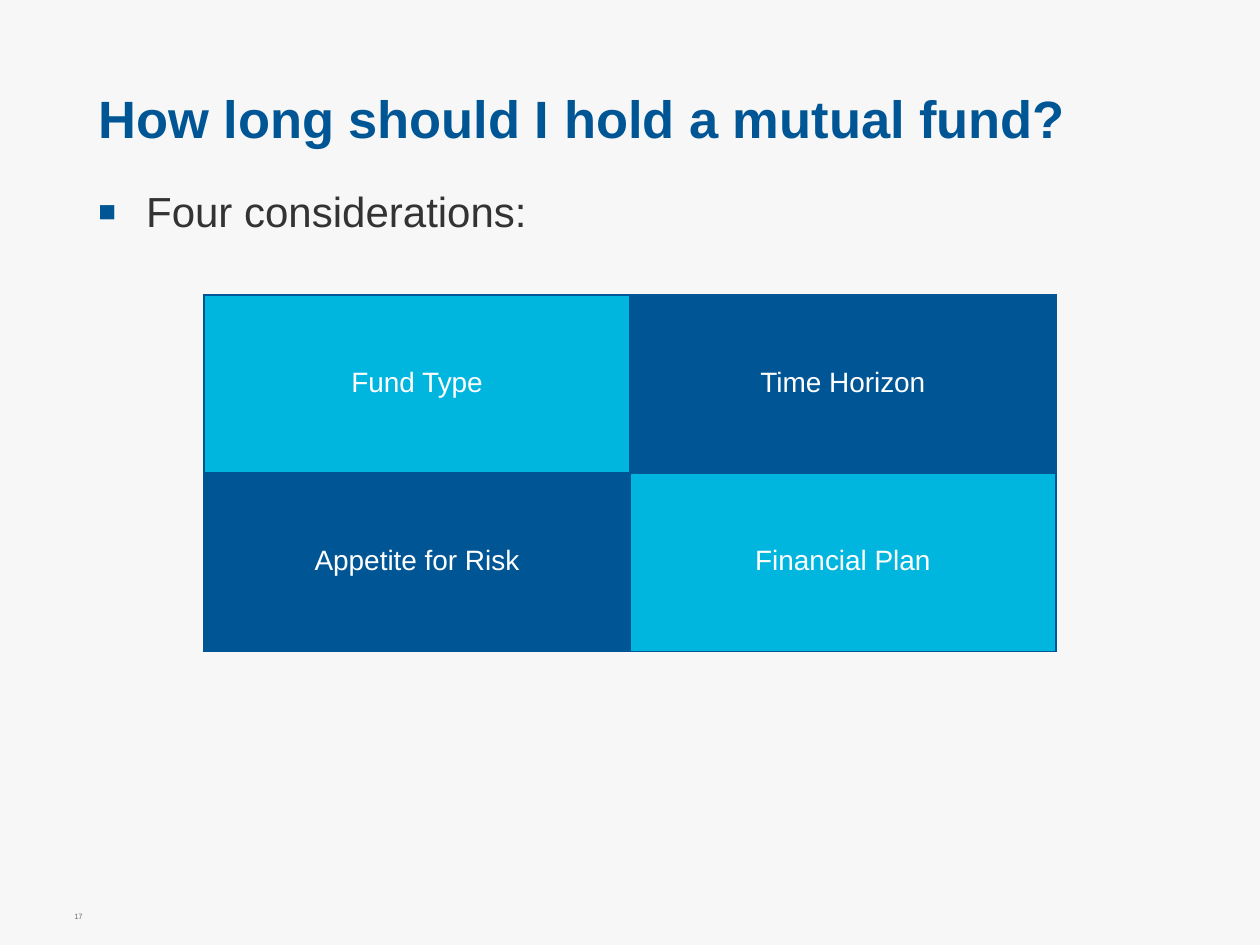
from dataclasses import dataclass

from lxml import etree
from pptx import Presentation
from pptx.dml.color import RGBColor
from pptx.enum.text import MSO_ANCHOR, PP_ALIGN
from pptx.oxml.ns import qn
from pptx.util import Inches, Pt

MIDDLE = MSO_ANCHOR.MIDDLE
TOP = MSO_ANCHOR.TOP
CENTER = PP_ALIGN.CENTER


@dataclass(frozen=True)
class Theme:
    """Colours, font and type sizes of the slide."""
    face: str = "Arial"
    back: str = "F7F7F7"
    navy: str = "005695"
    cyan: str = "00B6DE"
    ink: str = "333333"
    grey: str = "6C6F70"
    white: str = "FFFFFF"
    title: float = 30
    body: float = 24
    cell: float = 16
    number: float = 7.5


THEME = Theme()
FACTORS = [["Fund Type", "Time Horizon"], ["Appetite for Risk", "Financial Plan"]]


def style(para, size, color, bold=False):
    """Format every run of a paragraph."""
    for run in para.runs:
        font = run.font
        font.name, font.size, font.bold = THEME.face, Pt(size), bold
        font.color.rgb = RGBColor.from_string(color)


def add_text(slide, text, box, size, color, bold=False, anchor=TOP):
    """Add a text box without margins and return its paragraph."""
    frame = slide.shapes.add_textbox(*map(Inches, box)).text_frame
    frame.word_wrap = True
    frame.vertical_anchor = anchor
    frame.margin_left = frame.margin_right = 0
    frame.margin_top = frame.margin_bottom = 0
    frame.text = text
    para = frame.paragraphs[0]
    style(para, size, color, bold)
    return para


def add_bullet(para, color, indent):
    """Give a paragraph a small square bullet and a hanging indent."""
    props = para._p.get_or_add_pPr()
    props.set("marL", str(Inches(indent)))
    props.set("indent", str(-Inches(indent)))
    tint = etree.SubElement(props, qn("a:buClr"))
    etree.SubElement(tint, qn("a:srgbClr"), val=color)
    etree.SubElement(props, qn("a:buSzPct"), val="70000")
    etree.SubElement(props, qn("a:buFont"), typeface=THEME.face)
    etree.SubElement(props, qn("a:buChar"), char="■")


def add_border(cell, color, width):
    """Draw a line on all four sides of a cell."""
    props = cell._tc.get_or_add_tcPr()
    for place, side in enumerate(("a:lnL", "a:lnR", "a:lnT", "a:lnB")):
        line = etree.Element(qn(side), w=str(Pt(width)))
        fill = etree.SubElement(line, qn("a:solidFill"))
        etree.SubElement(fill, qn("a:srgbClr"), val=color)
        props.insert(place, line)


def fill_cell(cell, text, color):
    """Set the text, fill and border of one cell."""
    cell.text = text
    cell.vertical_anchor = MIDDLE
    cell.fill.solid()
    cell.fill.fore_color.rgb = RGBColor.from_string(color)
    para = cell.text_frame.paragraphs[0]
    para.alignment, para.line_spacing = CENTER, 0.9
    style(para, THEME.cell, THEME.white)
    add_border(cell, THEME.navy, 1)


def add_grid(slide, rows, box):
    """Add a table with fills in a checkerboard."""
    table = slide.shapes.add_table(len(rows), len(rows[0]), *map(Inches, box)).table
    table.first_row = table.horz_banding = False
    for r, row in enumerate(rows):
        for c, text in enumerate(row):
            color = THEME.navy if (r + c) % 2 else THEME.cyan
            fill_cell(table.cell(r, c), text, color)


def main():
    """Build the slide and save it."""
    deck = Presentation()
    deck.slide_width, deck.slide_height = Inches(10), Inches(7.5)
    slide = deck.slides.add_slide(deck.slide_layouts[6])
    slide.background.fill.solid()
    slide.background.fill.fore_color.rgb = RGBColor.from_string(THEME.back)

    number = add_text(slide, "17", (0.59, 7.17, 0.54, 0.13), THEME.number, THEME.grey)
    number.runs[0].font._element.set("baseline", "-25000")
    title = add_text(slide, "How long should I hold a mutual fund?",
                     (0.78, 0.5, 8.81, 0.94), THEME.title, THEME.navy, True, MIDDLE)
    title.line_spacing = 0.85
    lead = add_text(slide, "Four considerations:", (0.78, 1.52, 8.81, 5.05),
                    THEME.body, THEME.ink)
    lead.line_spacing, lead.space_after = 0.9, Pt(6)
    add_bullet(lead, THEME.navy, 0.38)
    add_grid(slide, FACTORS, (1.62, 2.34, 6.76, 2.83))
    deck.save("out.pptx")


if __name__ == "__main__":
    main()
